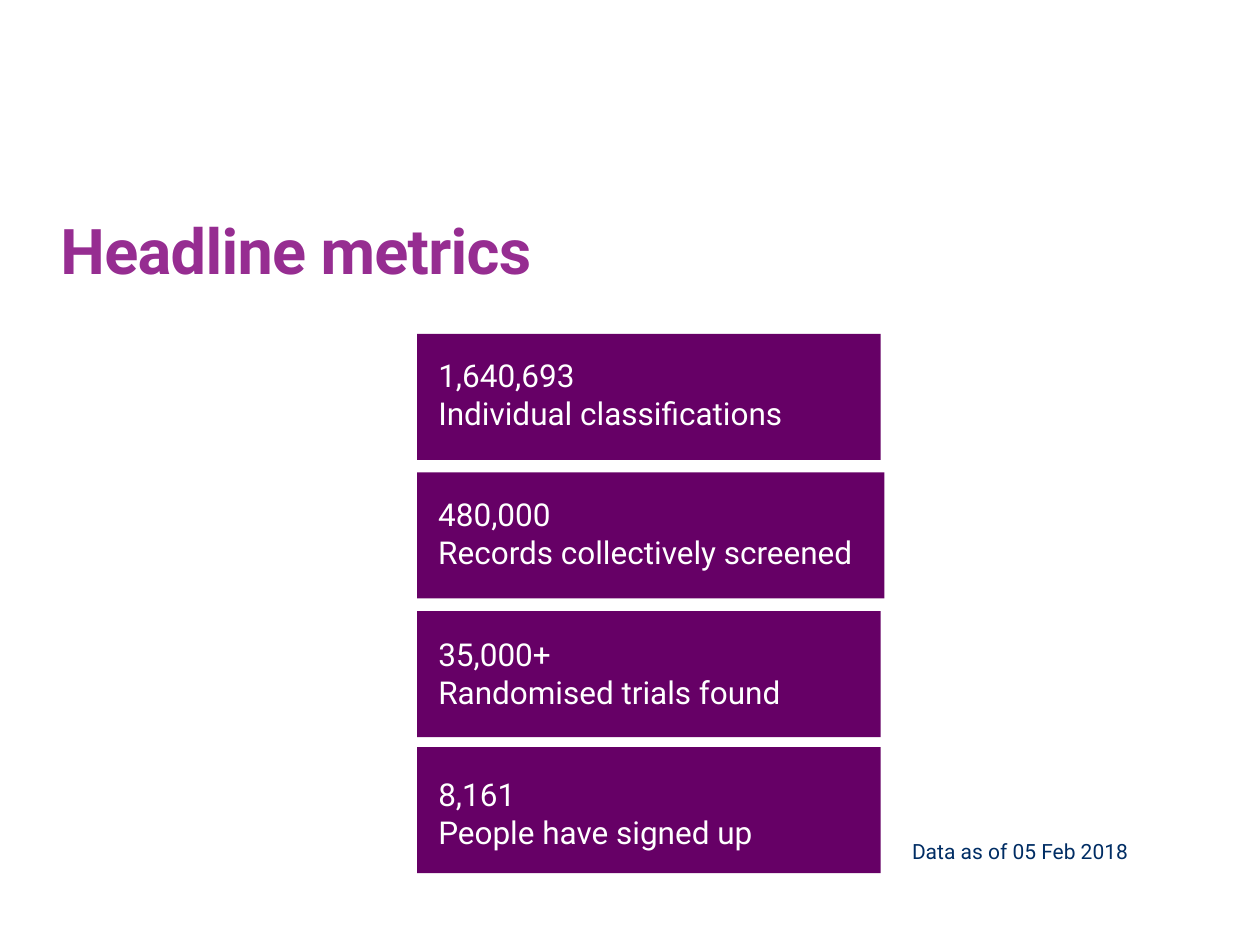
from dataclasses import dataclass

from pptx import Presentation
from pptx.dml.color import RGBColor
from pptx.enum.shapes import MSO_SHAPE
from pptx.enum.text import MSO_ANCHOR
from pptx.slide import Slide
from pptx.text.text import TextFrame
from pptx.util import Inches, Pt

COLOURS = {"title": "962D91", "panel": "660066", "label": "FFFFFF", "date": "002D64"}
FONT = "Roboto"
PANEL_LEFT = 3.31
PANEL_HEIGHT = 1
LABEL_LEFT = 3.38
LABEL_HEIGHT = 0.71


@dataclass
class Metric:
    value: str
    caption: str
    panel_top: float
    label_top: float
    panel_width: float = 3.68
    label_width: float = 3.25


METRICS = [
    Metric("1,640,693", "Individual classifications", 2.65, 2.78),
    Metric("480,000", "Records collectively screened", 3.75, 3.88, 3.71, 3.57),
    Metric("35,000+", "Randomised trials found", 4.85, 4.99),
    Metric("8,161", "People have signed up", 5.93, 6.1),
]


def add_text(page: Slide, lines: list[str], left: float, top: float, width: float,
             height: float, size: float, colour: str) -> TextFrame:
    box = page.shapes.add_textbox(Inches(left), Inches(top), Inches(width), Inches(height))
    frame = box.text_frame
    frame.word_wrap = True
    for index, line in enumerate(lines):
        para = frame.add_paragraph() if index else frame.paragraphs[0]
        span = para.add_run()
        span.text = line
        span.font.name = FONT
        span.font.size = Pt(size)
        span.font.color.rgb = RGBColor.from_string(COLOURS[colour])
    return frame


def add_title(page: Slide, title: str) -> None:
    frame = add_text(page, [title], 0.48, 1.59, 6.69, 0.69, 36, "title")
    frame.vertical_anchor = MSO_ANCHOR.BOTTOM
    frame.margin_left = frame.margin_right = Inches(0)
    frame.margin_top = frame.margin_bottom = Inches(0)
    span = frame.paragraphs[0].runs[0]
    span.font.bold = True
    span.font._element.set("spc", "-40")


def add_metric(page: Slide, metric: Metric) -> None:
    panel = page.shapes.add_shape(
        MSO_SHAPE.RECTANGLE, Inches(PANEL_LEFT), Inches(metric.panel_top),
        Inches(metric.panel_width), Inches(PANEL_HEIGHT))
    panel.shadow.inherit = False
    panel.fill.solid()
    panel.fill.fore_color.rgb = RGBColor.from_string(COLOURS["panel"])
    panel.line.fill.background()
    add_text(page, [metric.value, metric.caption], LABEL_LEFT, metric.label_top,
             metric.label_width, LABEL_HEIGHT, 18, "label")


def main() -> None:
    deck = Presentation()
    deck.slide_width = Inches(10)
    deck.slide_height = Inches(7.5)
    page = deck.slides.add_slide(deck.slide_layouts[6])
    add_title(page, "Headline metrics")
    for metric in METRICS:
        add_metric(page, metric)
    add_text(page, ["Data as of 05 Feb 2018"], 7.14, 6.61, 2.04, 0.3, 12, "date")
    deck.save("out.pptx")


if __name__ == "__main__":
    main()
